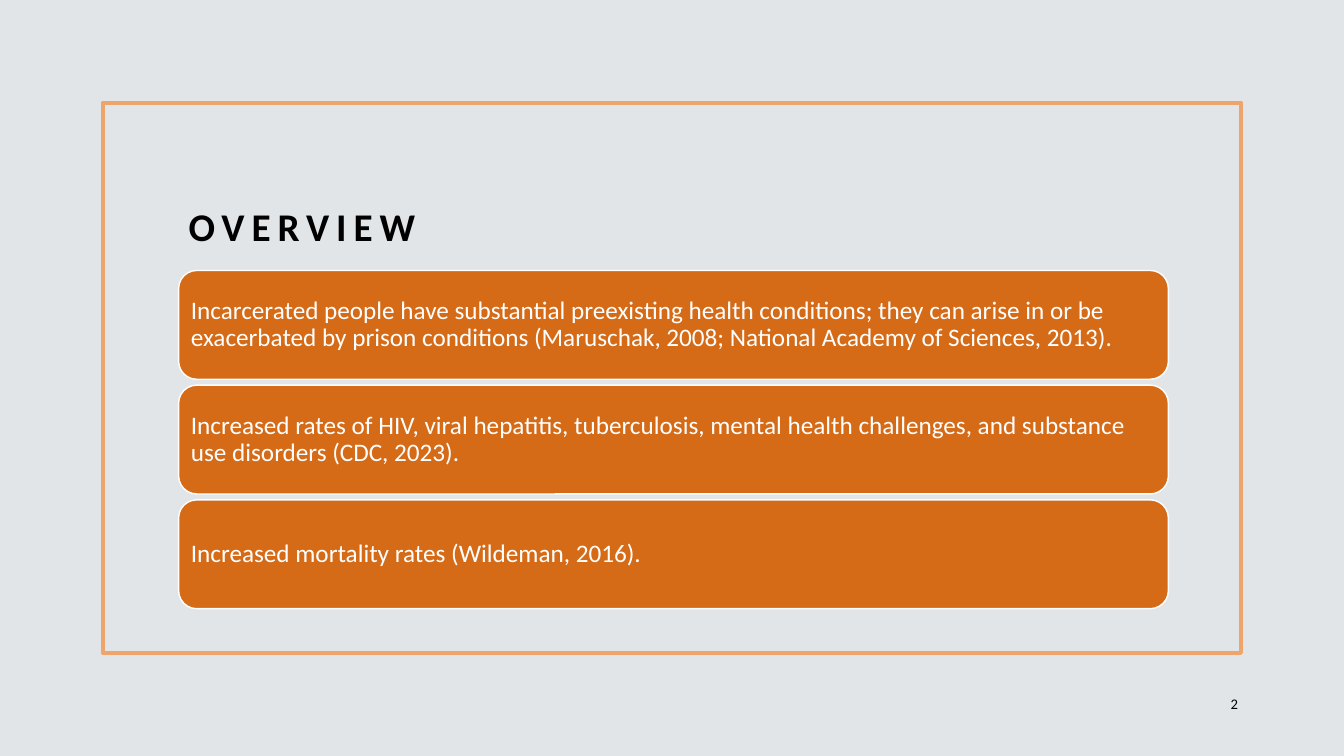
from dataclasses import dataclass

from pptx import Presentation
from pptx.dml.color import RGBColor
from pptx.enum.shapes import MSO_SHAPE
from pptx.enum.text import MSO_ANCHOR, MSO_AUTO_SIZE, PP_ALIGN
from pptx.util import Pt

RECTANGLE = MSO_SHAPE.RECTANGLE
ROUNDED = MSO_SHAPE.ROUNDED_RECTANGLE
MIDDLE, BOTTOM = MSO_ANCHOR.MIDDLE, MSO_ANCHOR.BOTTOM
LEFT, RIGHT = PP_ALIGN.LEFT, PP_ALIGN.RIGHT
NO_FIT = MSO_AUTO_SIZE.NONE


@dataclass(frozen=True)
class Theme:
    font: str = "Calibri"
    background: RGBColor = RGBColor(0xE2, 0xE5, 0xE8)
    frame: RGBColor = RGBColor(0xEF, 0xA4, 0x6B)
    card: RGBColor = RGBColor(0xD5, 0x6A, 0x17)
    light: RGBColor = RGBColor(0xFF, 0xFF, 0xFF)
    dark: RGBColor = RGBColor(0, 0, 0)
    title_size: float = 28
    body_size: float = 18
    number_size: float = 10.5


THEME = Theme()
POINTS = [
    "Incarcerated people have substantial preexisting health conditions; they can arise in or be "
    "exacerbated by prison conditions (Maruschak, 2008; National Academy of Sciences, 2013).",
    "Increased rates of HIV, viral hepatitis, tuberculosis, mental health challenges, "
    "and substance use disorders (CDC, 2023).",
    "Increased mortality rates (Wildeman, 2016).",
]


def apply(target, values):
    for name, value in values.items():
        setattr(target, name, value)


def place(box):
    return [Pt(length) for length in box]


def write(shape, text, size, color, frame=None, para=None, bold=False):
    apply(shape.text_frame, {"word_wrap": True, "auto_size": NO_FIT, **(frame or {})})
    paragraph = shape.text_frame.paragraphs[0]
    apply(paragraph, {"alignment": LEFT, **(para or {})})
    span = paragraph.add_run()
    span.text = text
    apply(span.font, {"name": THEME.font, "size": Pt(size), "bold": bold})
    span.font.color.rgb = color
    return span


def add_frame(page, box):
    frame = page.shapes.add_shape(RECTANGLE, *place(box))
    frame.shadow.inherit = False
    frame.fill.background()
    frame.line.color.rgb = THEME.frame
    frame.line.width = Pt(3)


def add_title(page, box, text):
    title = page.shapes.title
    apply(title, dict(zip(("left", "top", "width", "height"), place(box))))
    span = write(title, text, THEME.title_size, THEME.dark,
                 {"vertical_anchor": BOTTOM}, {"line_spacing": 1.2}, True)
    span.font._element.set("spc", "500")


def add_cards(page, box, texts, gap):
    left, top, width, height = box
    card_height = (height - gap * (len(texts) - 1)) / len(texts)
    inset = Pt(5)
    frame = {"vertical_anchor": MIDDLE, "margin_left": inset, "margin_right": inset,
             "margin_top": inset, "margin_bottom": inset}
    for index, text in enumerate(texts):
        card_top = top + index * (card_height + gap)
        card = page.shapes.add_shape(ROUNDED, *place((left, card_top, width, card_height)))
        card.shadow.inherit = False
        card.fill.solid()
        card.fill.fore_color.rgb = THEME.card
        card.line.color.rgb = THEME.light
        card.line.width = Pt(1)
        write(card, text, THEME.body_size, THEME.light, frame, {"line_spacing": 0.9})


def add_number(page, box, text):
    number = page.shapes.add_textbox(*place(box))
    write(number, text, THEME.number_size, THEME.dark,
          {"vertical_anchor": MIDDLE}, {"alignment": RIGHT})


def add_overview(deck):
    page = deck.slides.add_slide(deck.slide_layouts.get_by_name("Title Only"))
    page.background.fill.solid()
    page.background.fill.fore_color.rgb = THEME.background
    left, width = 127.6, 707
    add_frame(page, (73.4, 73.4, 813, 393))
    add_title(page, (left, 97.2, width, 84.2), "OVERVIEW")
    add_cards(page, (left, 193.2, width, 241.6), POINTS, 4.2)
    add_number(page, (842.4, 488.2, 49, 28.8), "2")


def main():
    deck = Presentation()
    apply(deck, {"slide_width": Pt(960), "slide_height": Pt(540)})
    add_overview(deck)
    deck.save("out.pptx")


if __name__ == "__main__":
    main()
